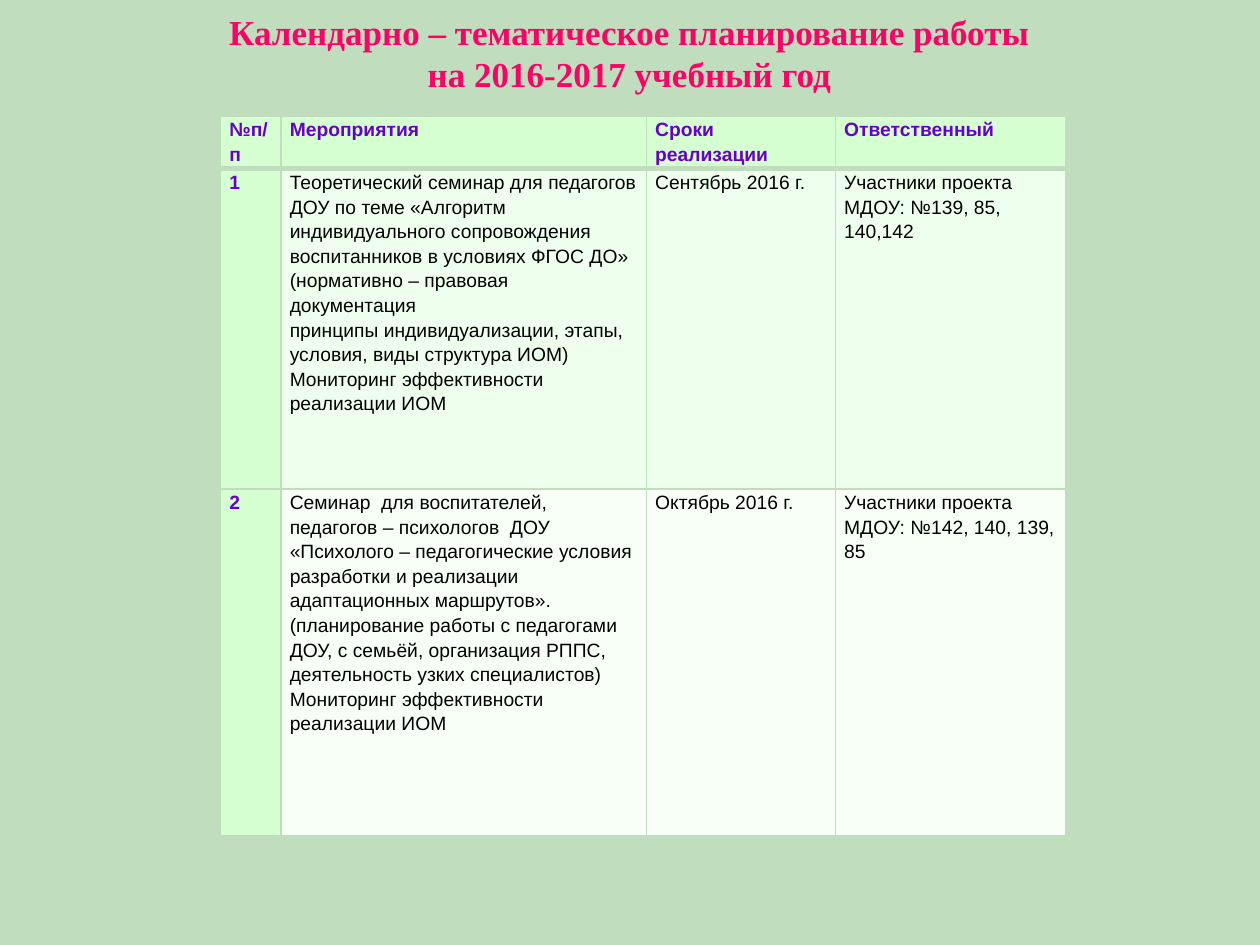
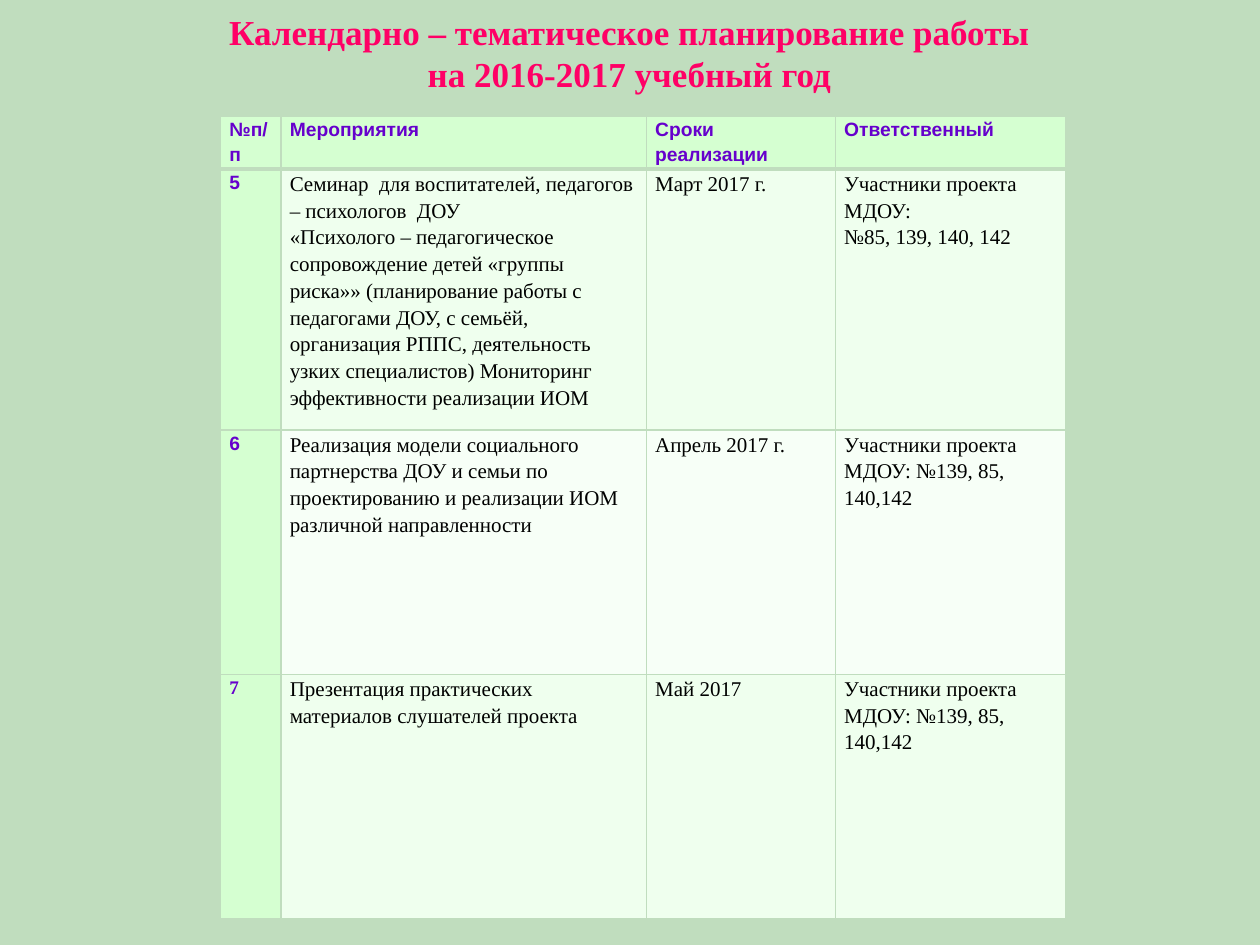
from dataclasses import dataclass

from pptx import Presentation
from pptx.dml.color import RGBColor
from pptx.enum.text import MSO_ANCHOR, MSO_AUTO_SIZE, PP_ALIGN
from pptx.oxml.ns import qn
from pptx.util import Inches, Pt
from lxml.etree import SubElement

BACKGROUND = RGBColor(0xC0, 0xDD, 0xBE)
HEADING_FILL = RGBColor(0xD5, 0xFF, 0xD1)
BAND_FILLS = (RGBColor(0xEF, 0xFF, 0xEE), RGBColor(0xF7, 0xFF, 0xF7))
TITLE_COLOR = RGBColor(0xFF, 0x00, 0x66)
HEADING_COLOR = RGBColor(0x66, 0x00, 0xCC)
BODY_COLOR = RGBColor(0x00, 0x00, 0x00)

SANS = "Arial"
SERIF = "Times New Roman"

TITLE_LINES = (
    "Календарно – тематическое планирование работы",
    "на 2016-2017 учебный год",
)
HEADERS = ("№п/п", "Мероприятия", "Сроки реализации", "Ответственный")
COLUMN_WIDTHS = (0.48, 2.9, 1.5, 1.83)
HEADER_HEIGHT = 0.42


@dataclass
class Event:
    number: str
    description: str
    term: str
    participants: str
    height: float
    number_font: str = SANS


AUTUMN_EVENTS = (
    Event(
        "1",
        "Теоретический семинар для педагогов ДОУ по теме «Алгоритм "
        "индивидуального сопровождения воспитанников в условиях ФГОС ДО»\n"
        "(нормативно – правовая документация\n"
        "принципы индивидуализации, этапы, условия, виды структура ИОМ) "
        "Мониторинг эффективности реализации ИОМ",
        "Сентябрь 2016 г.",
        "Участники проекта МДОУ: №139, 85, 140,142",
        2.54,
    ),
    Event(
        "2",
        "Семинар  для воспитателей, педагогов – психологов  ДОУ\n"
        "«Психолого – педагогические условия разработки и реализации "
        "адаптационных маршрутов».\n"
        "(планирование работы с педагогами ДОУ, с семьёй, организация РППС, "
        "деятельность узких специалистов) Мониторинг эффективности "
        "реализации ИОМ",
        "Октябрь 2016 г.",
        "Участники проекта МДОУ: №142, 140, 139, 85",
        2.75,
    ),
)
SPRING_EVENTS = (
    Event(
        "5",
        "Семинар  для воспитателей, педагогов – психологов  ДОУ\n"
        "«Психолого – педагогическое сопровождение детей «группы риска»» "
        "(планирование работы с педагогами ДОУ, с семьёй, организация РППС, "
        "деятельность узких специалистов) Мониторинг эффективности "
        "реализации ИОМ",
        "Март 2017 г.",
        "Участники проекта МДОУ:\n№85, 139, 140, 142",
        2.07,
    ),
    Event(
        "6",
        "Реализация модели социального партнерства ДОУ и семьи по "
        "проектированию и реализации ИОМ различной направленности",
        "Апрель 2017 г.",
        "Участники проекта МДОУ: №139, 85, 140,142",
        1.94,
    ),
    Event(
        "7",
        "Презентация практических материалов слушателей проекта",
        "Май 2017",
        "Участники проекта МДОУ: №139, 85, 140,142",
        1.94,
        SERIF,
    ),
)


def style_font(font, name, size, color, bold):
    font.name = name
    font.size = Pt(size)
    font.color.rgb = color
    font.bold = bold


def add_title(slide):
    box = slide.shapes.add_textbox(Inches(1.69), Inches(0.03), Inches(6.61), Inches(0.77))
    frame = box.text_frame
    frame.word_wrap = True
    frame.auto_size = MSO_AUTO_SIZE.SHAPE_TO_FIT_TEXT
    frame.vertical_anchor = MSO_ANCHOR.MIDDLE
    frame.text = "\n".join(TITLE_LINES)
    for paragraph in frame.paragraphs:
        paragraph.alignment = PP_ALIGN.CENTER
        style_font(paragraph.font, SERIF, 20, TITLE_COLOR, True)


def set_borders(cell, top, bottom):
    """Draw all four sides in the background colour; widths are in points."""
    properties = cell._tc.get_or_add_tcPr()
    for side, width in (("lnL", 1), ("lnR", 1), ("lnT", top), ("lnB", bottom)):
        line = SubElement(properties, qn(f"a:{side}"), w=str(Pt(width)))
        fill = SubElement(line, qn("a:solidFill"))
        SubElement(fill, qn("a:srgbClr"), val=str(BACKGROUND))


def fill_cell(cell, text, fill, font_style, top=1, bottom=1):
    set_borders(cell, top, bottom)
    cell.fill.solid()
    cell.fill.fore_color.rgb = fill
    cell.margin_left = cell.margin_right = Inches(0.07)
    cell.margin_top = cell.margin_bottom = 0
    cell.text = text
    for paragraph in cell.text_frame.paragraphs:
        paragraph.line_spacing = 1.15
        style_font(paragraph.font, *font_style)


def add_plan_table(slide, events, body_font, body_size):
    heights = [HEADER_HEIGHT] + [event.height for event in events]
    table = slide.shapes.add_table(
        len(heights), len(HEADERS), Inches(1.75), Inches(0.92),
        Inches(sum(COLUMN_WIDTHS)), Inches(sum(heights)),
    ).table
    table.first_row = table.horz_banding = False
    for column, width in zip(table.columns, COLUMN_WIDTHS):
        column.width = Inches(width)
    for row, height in zip(table.rows, heights):
        row.height = Inches(height)

    for column, header in enumerate(HEADERS):
        fill_cell(table.cell(0, column), header, HEADING_FILL,
                  (SANS, 11, HEADING_COLOR, True), bottom=3)

    body_style = (body_font, body_size, BODY_COLOR, False)
    for row, event in enumerate(events, start=1):
        top = 3 if row == 1 else 1
        fill_cell(table.cell(row, 0), event.number, HEADING_FILL,
                  (event.number_font, 11, HEADING_COLOR, True), top)
        band = BAND_FILLS[(row - 1) % 2]
        details = (event.description, event.term, event.participants)
        for column, text in enumerate(details, start=1):
            fill_cell(table.cell(row, column), text, band, body_style, top)


def add_plan_slide(presentation, events, body_font, body_size):
    slide = presentation.slides.add_slide(presentation.slide_layouts[6])
    slide.background.fill.solid()
    slide.background.fill.fore_color.rgb = BACKGROUND
    add_plan_table(slide, events, body_font, body_size)
    add_title(slide)


def main():
    presentation = Presentation()
    presentation.slide_width = Inches(10)
    presentation.slide_height = Inches(7.5)
    add_plan_slide(presentation, AUTUMN_EVENTS, SANS, 11)
    add_plan_slide(presentation, SPRING_EVENTS, SERIF, 12)
    presentation.save("out.pptx")


if __name__ == "__main__":
    main()
